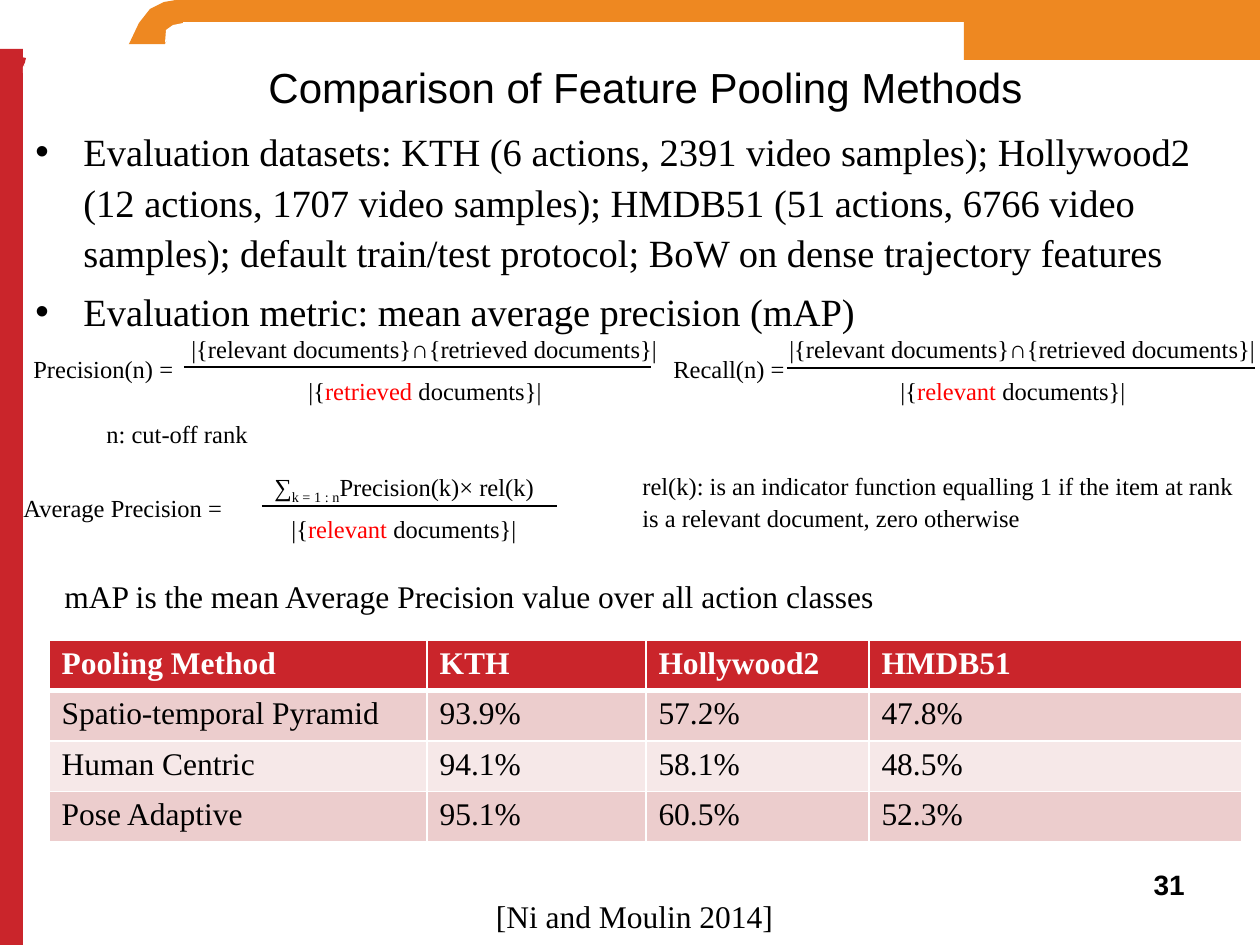
import pptx
import pptx.dml.color
import pptx.enum.shapes
import pptx.enum.text
import pptx.util
from lxml import etree

PX = 914400 // 126
SERIF, SANS = "Times New Roman", "Arial"
BLACK, WHITE, RED = "000000", "FFFFFF", "FF0000"
ORANGE, CRIMSON = "EE8821", "CA252B"
ALIGN = pptx.enum.text.PP_ALIGN
A = "{http://schemas.openxmlformats.org/drawingml/2006/main}"


def rgb(value):
    return pptx.dml.color.RGBColor.from_string(value)


def add_text(box, paragraphs, size, face=SERIF, align=ALIGN.LEFT, wrap=True, spacing=1.1):
    """Add a text box; each paragraph is a list of (text, colour) runs."""
    frame = slide.shapes.add_textbox(*(n * PX for n in box)).text_frame
    frame.word_wrap = wrap
    for i, pieces in enumerate(paragraphs):
        paragraph = frame.paragraphs[0] if i == 0 else frame.add_paragraph()
        paragraph.alignment = align
        paragraph.line_spacing = spacing
        for text, color in pieces:
            run = paragraph.add_run()
            run.text = text
            run.font.size = pptx.util.Pt(size)
            run.font.name = face
            run.font.color.rgb = rgb(color)
    return frame


presentation = pptx.Presentation()
presentation.slide_width = 1260 * PX
presentation.slide_height = 945 * PX
slide = presentation.slides.add_slide(presentation.slide_layouts[6])

# Frame along the top and left edges
bars = [
    ((964, 0, 296, 60), ORANGE),
    ((0, 49, 23, 896), CRIMSON),
    ((176, 0, 1084, 22), ORANGE),
]
corners = [
    ([(129, 44), (139, 23), (150, 9), (164, 2), (176, 0)], ORANGE),
    ([(129, 44), (149, 19), (169, 3), (176, 0), (183, 23), (173, 28), (165, 44)], ORANGE),
    ([(165, 43), (166, 30), (173, 25), (183, 23)], WHITE),
    ([(21, 76), (24, 67), (26, 58), (21, 57)], CRIMSON),
    ([(26, 60), (25, 63), (23, 67), (23, 73)], WHITE),
]
frame_parts = []
for box, color in bars:
    bar = slide.shapes.add_shape(
        pptx.enum.shapes.MSO_SHAPE.RECTANGLE, *(n * PX for n in box))
    frame_parts.append((bar, color))
for points, color in corners:
    outline = slide.shapes.build_freeform(*points[0], scale=PX)
    outline.add_line_segments(points[1:], close=True)
    frame_parts.append((outline.convert_to_shape(), color))
for part, color in frame_parts:
    part.shadow.inherit = False
    part.fill.solid()
    part.fill.fore_color.rgb = rgb(color)
    part.line.fill.background()

# Title and bullets
title = add_text((32, 58, 1227, 57), [[("Comparison of Feature Pooling Methods", BLACK)]],
                 24, SANS, ALIGN.CENTER, spacing=1.0)
title.margin_left = title.margin_right = 5 * PX
title.margin_top = title.margin_bottom = 2 * PX
title.vertical_anchor = pptx.enum.text.MSO_ANCHOR.MIDDLE

evaluation = add_text((23, 117, 1234, 219), [
    [("Evaluation datasets: KTH (6 actions, 2391 video samples); Hollywood2 "
      "(12 actions, 1707 video samples); HMDB51 (51 actions, 6766 video samples); "
      "default train/test protocol; BoW on dense trajectory features", BLACK)],
    [("Evaluation metric: mean average precision (mAP)", BLACK)],
], 22)
evaluation.paragraphs[1].space_before = pptx.util.Pt(4.4)
for paragraph in evaluation.paragraphs:
    properties = paragraph._p.get_or_add_pPr()
    properties.set("marL", str(48 * PX))
    properties.set("indent", str(-48 * PX))
    etree.SubElement(properties, A + "buFont", typeface=SANS)
    etree.SubElement(properties, A + "buChar", char="•")

# Formulas
overlap = [("|{relevant documents}∩{retrieved documents}|", BLACK)]
relevant, retrieved = (
    [("|{", BLACK), (word, RED), (" documents}|", BLACK)] for word in ("relevant", "retrieved"))
fractions = [
    ("Precision(n) =", 21, 179, 231, retrieved),
    ("Recall(n) =", 661, 777, 819, relevant),
]
for name, name_x, top_x, bottom_x, denominator in fractions:
    add_text((top_x, 325, 494, 43), [overlap], 14)
    add_text((bottom_x, 367, 388, 43), [denominator], 14, align=ALIGN.CENTER)
    add_text((name_x, 345, 199, 43), [[(name, BLACK)]], 14)

add_text((94, 410, 210, 43), [[("n: cut-off rank", BLACK)]], 14)
precision_sum = add_text((262, 462, 945, 43), [
    [("∑", BLACK), ("k = 1 : n", BLACK), ("Precision(k)× rel(k)", BLACK)]], 14)
precision_sum.paragraphs[0].runs[1]._r.get_or_add_rPr().set("baseline", "-25000")
add_text((11, 484, 232, 43), [[("Average Precision =", BLACK)]], 14, wrap=False)
add_text((210, 505, 388, 43), [relevant], 14, align=ALIGN.CENTER)

for left, right, y in [(184, 651, 367), (787, 1255, 368), (262, 557, 506)]:
    fraction_bar = slide.shapes.add_connector(
        pptx.enum.shapes.MSO_CONNECTOR.STRAIGHT, left * PX, y * PX, right * PX, y * PX)
    fraction_bar.line.color.rgb = rgb(BLACK)
    fraction_bar.line.width = pptx.util.Pt(1.5)
    etree.SubElement(fraction_bar._element.spPr, A + "effectLst")

add_text((630, 462, 625, 72), [[
    ("rel(k): is an indicator function equalling 1 if the item at rank "
     "is a relevant document, zero otherwise", BLACK)]], 14)
add_text((52, 567, 835, 50), [[
    ("mAP is the mean Average Precision value over all action classes", BLACK)]], 18, wrap=False)

# Results
results = [
    ("Pooling Method", "KTH", "Hollywood2", "HMDB51"),
    ("Spatio-temporal Pyramid", "93.9%", "57.2%", "47.8%"),
    ("Human Centric", "94.1%", "58.1%", "48.5%"),
    ("Pose Adaptive", "95.1%", "60.5%", "52.3%"),
]
row_fills = [CRIMSON, "ECCDCD", "F6E8E8", "ECCDCD"]
column_widths = [378, 219, 223, 373]
table = slide.shapes.add_table(
    4, 4, 49 * PX, 640 * PX, sum(column_widths) * PX, 4 * 47 * PX).table
for column, width in zip(table.columns, column_widths):
    column.width = width * PX
for r, values in enumerate(results):
    for c, value in enumerate(values):
        cell = table.cell(r, c)
        cell.text = value
        font = cell.text_frame.paragraphs[0].runs[0].font
        font.size = pptx.util.Pt(18)
        font.name = SERIF
        font.bold = r == 0
        font.color.rgb = rgb(WHITE if r == 0 else BLACK)
        for side in "LRTB":
            under_header = (r, side) in [(0, "B"), (1, "T")]
            border = etree.SubElement(cell._tc.get_or_add_tcPr(), A + "ln" + side,
                                      w=str(pptx.util.Pt(3 if under_header else 1)))
            border_fill = etree.SubElement(border, A + "solidFill")
            etree.SubElement(border_fill, A + "srgbClr", val=WHITE)
        cell.fill.solid()
        cell.fill.fore_color.rgb = rgb(row_fills[r])

# Citation and page number
add_text((472, 887, 325, 50), [[("[Ni and Moulin 2014]", BLACK)]], 18, align=ALIGN.CENTER)
page_number = add_text((903, 861, 294, 66), [[("31", BLACK)]], 16, SANS, ALIGN.RIGHT, spacing=1.0)
page_number.paragraphs[0].runs[0].font.bold = True

presentation.save("out.pptx")
